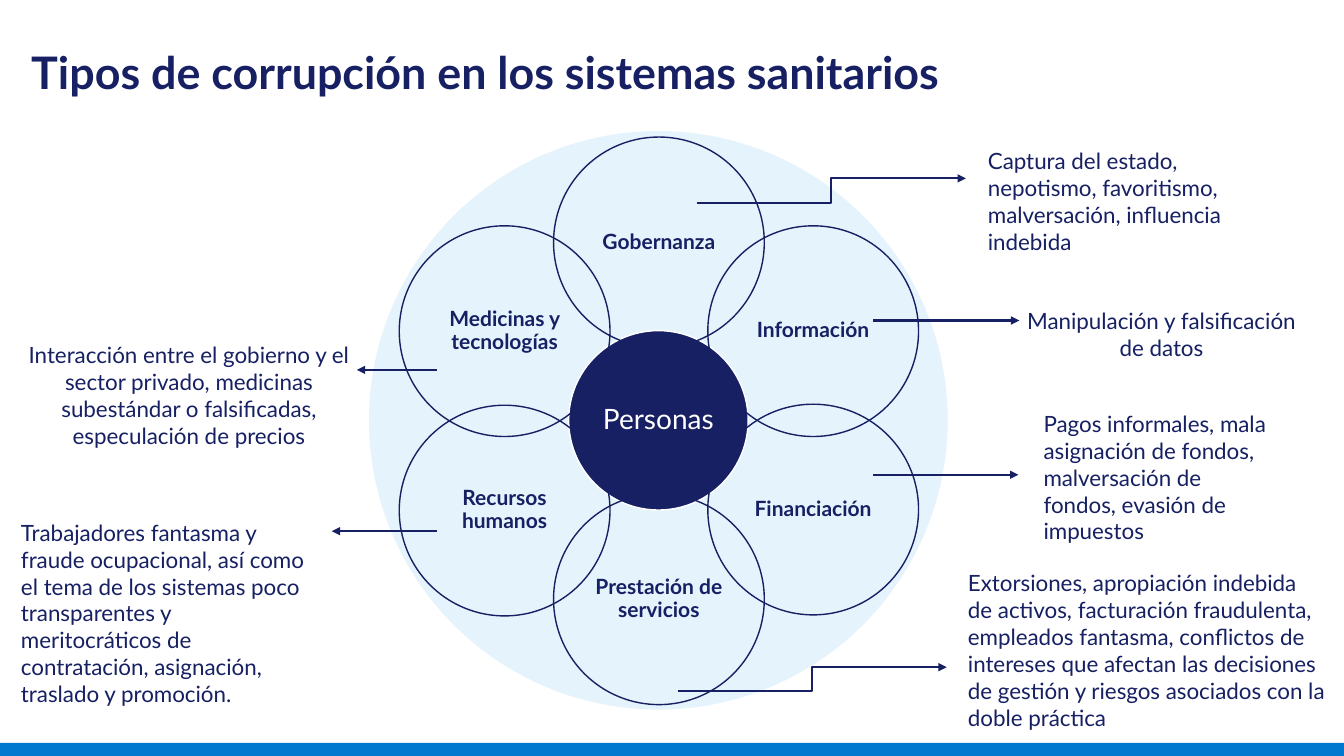
from dataclasses import dataclass
from math import cos, radians, sin

from lxml.etree import SubElement
from pptx import Presentation
from pptx.dml.color import RGBColor
from pptx.enum.shapes import MSO_CONNECTOR as Link, MSO_SHAPE as Preset
from pptx.enum.text import MSO_ANCHOR as Anchor, MSO_AUTO_SIZE as AutoSize, PP_ALIGN as Align
from pptx.oxml.ns import qn
from pptx.shapes.autoshape import Shape
from pptx.slide import Slide
from pptx.text.text import TextFrame
from pptx.util import Emu, Pt

EMU_PER_PX = 9144  # 100 px to the inch
NAVY, BLUE, PALE, WHITE = "162063", "0078CF", "E5F3FC", "FFFFFF"
FONT = "Lato"
CENTER_X, CENTER_Y = 653, 417
DISC, HUB, PETAL, RING_RADIUS = 574, 178, 209, 177


@dataclass(frozen=True)
class Box:
    left: int
    top: int
    width: int
    height: int


@dataclass(frozen=True)
class Style:
    size: int
    color: str = NAVY
    bold: bool = False
    align: Align = Align.LEFT
    spacing: float = 1.0


@dataclass(frozen=True)
class Note:
    text: str
    box: Box
    align: Align = Align.LEFT
    left_inset: int = 10


@dataclass(frozen=True)
class Arrow:
    x1: int
    y1: int
    x2: int
    y2: int


TITLE = "Tipos de corrupción en los sistemas sanitarios"
AREAS = ["Gobernanza", "Información", "Financiación", "Prestación de servicios",
         "Recursos humanos", "Medicinas y tecnologías"]
SERVICES_NOTE = Note(
    "Extorsiones, apropiación indebida de activos, facturación fraudulenta, empleados "
    "fantasma, conflictos de intereses que afectan las decisiones de gestión y riesgos "
    "asociados con la doble práctica", Box(950, 560, 375, 154))
NOTES = [
    Note("Manipulación y falsificación de datos", Box(1001, 300, 302, 67), Align.CENTER),
    Note("Pagos informales, mala asignación de fondos, malversación de fondos, evasión de "
         "impuestos", Box(975, 402, 302, 67), left_inset=60),
    Note("Captura del estado, nepotismo, favoritismo, malversación, influencia indebida",
         Box(970, 141, 313, 117)),
    Note("Interacción entre el gobierno y el sector privado, medicinas subestándar o "
         "falsificadas, especulación de precios", Box(6, 334, 363, 124), Align.CENTER),
    Note("Trabajadores fantasma y fraude ocupacional, así como el tema de los sistemas poco "
         "transparentes y meritocráticos de contratación, asignación, traslado y promoción.",
         Box(11, 510, 311, 176)),
]
ARROWS = [
    Arrow(672, 686, 939, 662),
    Arrow(866, 318, 1011, 318),
    Arrow(866, 471, 1010, 471),
    Arrow(691, 201, 958, 177),
    Arrow(433, 367, 354, 367),
    Arrow(433, 527, 329, 527),
]


def px(length: int) -> Emu:
    return Emu(length * EMU_PER_PX)


def rgb(color: str) -> RGBColor:
    return RGBColor.from_string(color)


def corners(box: Box) -> tuple[Emu, Emu, Emu, Emu]:
    return px(box.left), px(box.top), px(box.width), px(box.height)


def place(shape: Shape, box: Box) -> None:
    shape.left, shape.top, shape.width, shape.height = corners(box)


def write(frame: TextFrame, text: str, style: Style, anchor: Anchor = Anchor.TOP) -> None:
    frame.word_wrap = True
    frame.auto_size = AutoSize.NONE
    frame.vertical_anchor = anchor
    paragraph = frame.paragraphs[0]
    paragraph.alignment = style.align
    paragraph.line_spacing = style.spacing
    paragraph.space_before = Pt(0)
    run = paragraph.add_run()
    run.text = text
    run.font.name = FONT
    run.font.size = Pt(style.size)
    run.font.bold = style.bold
    run.font.color.rgb = rgb(style.color)


def add_filled(slide: Slide, preset: Preset, box: Box, fill: str | None,
               line: str | None = None) -> Shape:
    shape = slide.shapes.add_shape(preset, *corners(box))
    shape.shadow.inherit = False
    if fill:
        shape.fill.solid()
        shape.fill.fore_color.rgb = rgb(fill)
    else:
        shape.fill.background()
    if line:
        shape.line.color.rgb = rgb(line)
        shape.line.width = Pt(1)
    else:
        shape.line.fill.background()
    return shape


def add_circle(slide: Slide, x: int, y: int, diameter: int, fill: str | None,
               line: str | None = None) -> Shape:
    box = Box(x - diameter // 2, y - diameter // 2, diameter, diameter)
    return add_filled(slide, Preset.OVAL, box, fill, line)


def label(circle: Shape, text: str, style: Style) -> None:
    frame = circle.text_frame
    frame.margin_left = frame.margin_right = frame.margin_top = frame.margin_bottom = px(2)
    write(frame, text, style, Anchor.MIDDLE)


def add_flower(slide: Slide) -> None:
    """Pale disc, central hub and six overlapping petals, clockwise from the top."""
    add_circle(slide, CENTER_X, CENTER_Y, DISC, PALE)
    hub = add_circle(slide, CENTER_X, CENTER_Y, HUB, NAVY, WHITE)
    label(hub, "Personas", Style(20, WHITE, align=Align.CENTER, spacing=0.9))
    area_style = Style(15, bold=True, align=Align.CENTER, spacing=0.9)
    for index, area in enumerate(AREAS):
        angle = radians(index * 360 / len(AREAS))
        x = round(CENTER_X + RING_RADIUS * sin(angle))
        y = round(CENTER_Y - RING_RADIUS * cos(angle))
        label(add_circle(slide, x, y, PETAL, None, NAVY), area, area_style)


def add_arrow(slide: Slide, arrow: Arrow) -> None:
    kind = Link.STRAIGHT if arrow.y1 == arrow.y2 else Link.ELBOW
    connector = slide.shapes.add_connector(
        kind, px(arrow.x1), px(arrow.y1), px(arrow.x2), px(arrow.y2))
    connector.line.color.rgb = rgb(NAVY)
    connector.line.width = Pt(1.5)
    SubElement(connector.line._get_or_add_ln(), qn("a:tailEnd"), type="triangle")
    SubElement(connector._element.spPr, qn("a:effectLst"))


def add_note(slide: Slide, note: Note) -> None:
    frame = slide.shapes.add_textbox(*corners(note.box)).text_frame
    frame.margin_left = px(note.left_inset)
    write(frame, note.text, Style(16, align=note.align))


def fill_placeholders(slide: Slide) -> None:
    title, body = slide.shapes.title, slide.placeholders[1]
    place(title, Box(21, 45, 1045, 80))
    write(title.text_frame, TITLE, Style(32, bold=True, spacing=0.9))
    place(body, SERVICES_NOTE.box)
    properties = body.text_frame.paragraphs[0]._p.get_or_add_pPr()
    properties.set("marL", "0")
    properties.set("indent", "0")
    SubElement(properties, qn("a:buNone"))
    write(body.text_frame, SERVICES_NOTE.text, Style(16))


def main() -> None:
    deck = Presentation()
    deck.slide_width, deck.slide_height = px(1333), px(750)
    slide = deck.slides.add_slide(deck.slide_layouts[1])
    fill_placeholders(slide)
    add_filled(slide, Preset.RECTANGLE, Box(0, 737, 1333, 13), BLUE)
    add_flower(slide)
    for arrow in ARROWS:
        add_arrow(slide, arrow)
    for note in NOTES:
        add_note(slide, note)
    deck.save("out.pptx")


if __name__ == "__main__":
    main()
